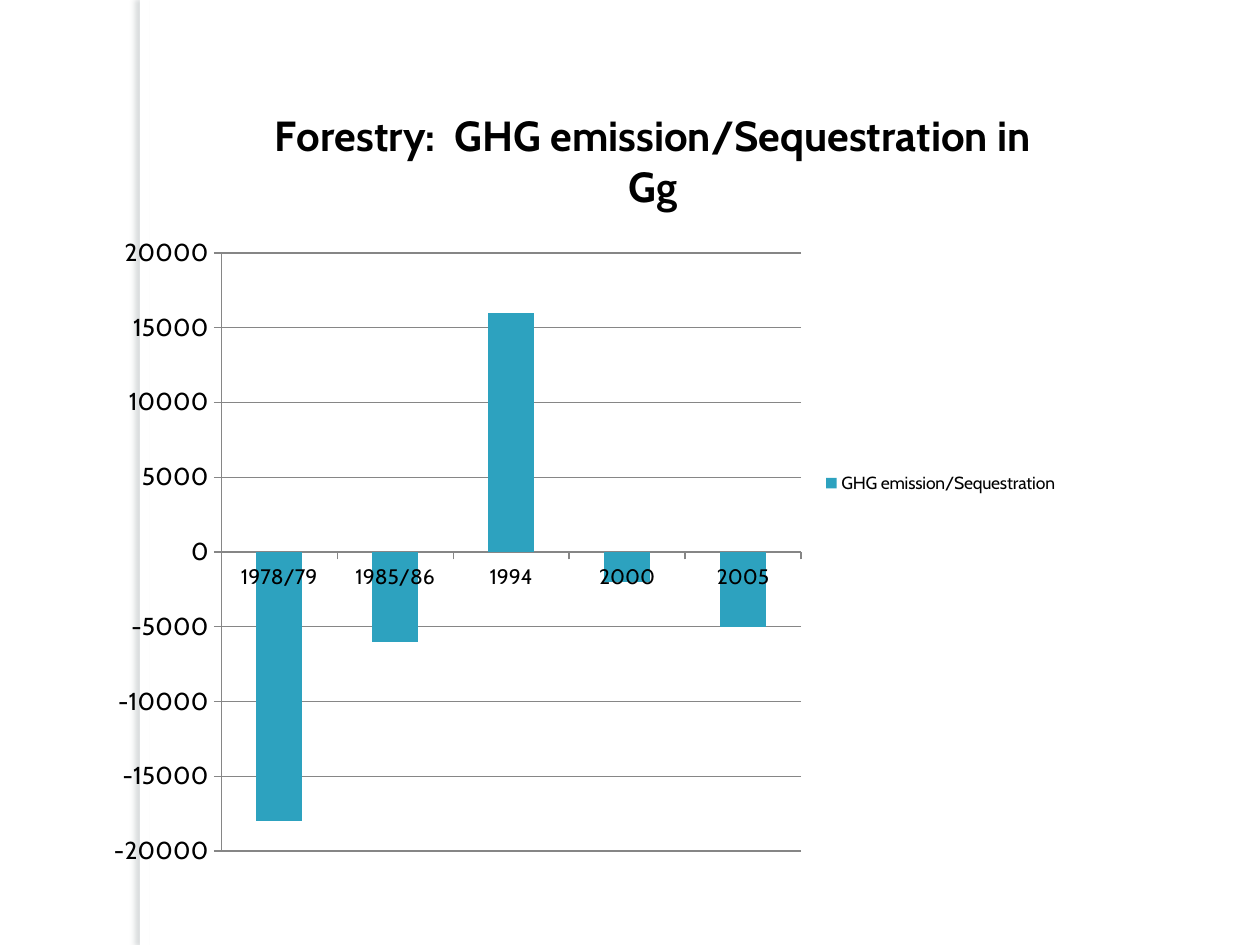
from lxml.etree import SubElement
from pptx import Presentation
from pptx.chart.data import CategoryChartData
from pptx.dml.color import RGBColor
from pptx.enum.chart import XL_CHART_TYPE, XL_LEGEND_POSITION, XL_TICK_MARK
from pptx.enum.shapes import MSO_SHAPE
from pptx.oxml import parse_xml
from pptx.oxml.ns import nsdecls, qn
from pptx.util import Cm, Pt


def color(code):
    return RGBColor.from_string(code)


class Deck:
    font = {"name": "Cabin", "size": Pt(10), "bold": False}
    ink, grey, blue = "000000", "868686", "2DA2BF"

    def __init__(self, wide, high):
        self.prs = Presentation()
        self.prs.slide_width, self.prs.slide_height = Cm(wide), Cm(high)
        self.slide = self.prs.slides.add_slide(self.prs.slide_layouts[6])

    def style(self, font, **extra):
        for key, value in {**self.font, **extra}.items():
            setattr(font, key, value)
        font.color.rgb = color(self.ink)

    def strip(self, *box):
        """White band with a soft shadow on its left."""
        band = self.slide.shapes.add_shape(MSO_SHAPE.RECTANGLE, *map(Cm, box))
        band.shadow.inherit = False
        band.fill.solid()
        band.fill.fore_color.rgb = color("FFFFFF")
        band.line.fill.background()
        glow = band.element.spPr.find(qn("a:effectLst"))
        glow.append(parse_xml(
            f'<a:outerShdw {nsdecls("a")} blurRad="{Pt(3)}" dist="{Pt(3)}" '
            'dir="10800000" algn="tl" rotWithShape="0"><a:srgbClr val="6E7A7D">'
            '<a:alpha val="25000"/></a:srgbClr></a:outerShdw>'))

    def place(self, part, box, inner=False, **spots):
        """Fix a chart part, given in cm from the corner of the chart."""
        old = part.find(qn("c:layout"))
        if old is not None:
            part.remove(old)
        layout = parse_xml(f'<c:layout {nsdecls("c")}><c:manualLayout/></c:layout>')
        marks = {"layoutTarget": "inner"} if inner else {}
        marks.update(xMode="edge", yMode="edge")
        for key, value in spots.items():
            marks[key] = value / (box[2] if key in "xw" else box[3])
        for tag, value in marks.items():
            SubElement(layout[0], qn(f"c:{tag}")).set("val", str(value))
        text = part.find(qn("c:tx"))
        part.insert(0 if text is None else 1, layout)

    def axis(self, axis, size):
        axis.major_tick_mark = XL_TICK_MARK.OUTSIDE
        axis.format.line.color.rgb = color(self.grey)
        self.style(axis.tick_labels.font, size=Pt(size))

    def columns(self, box, title, name, points):
        data = CategoryChartData()
        data.categories = list(points)
        data.add_series(name, points.values())
        chart = self.slide.shapes.add_chart(
            XL_CHART_TYPE.COLUMN_CLUSTERED, *map(Cm, box), data).chart
        self.style(chart.font)

        # Title and legend
        head = chart.chart_title.text_frame
        head.text = title
        self.style(head.paragraphs[0].runs[0].font, size=Pt(24), bold=True)
        self.place(chart.chart_title._element, box, x=3.49, y=0.28)
        chart.has_legend = True
        chart.legend.position = XL_LEGEND_POSITION.RIGHT
        chart.legend.include_in_layout = False
        self.style(chart.legend.font)

        # Axes and grid
        self.axis(chart.category_axis, 12)
        scale = chart.value_axis
        self.axis(scale, 14)
        for key, value in {"minimum_scale": -20000, "maximum_scale": 20000,
                           "major_unit": 5000, "has_major_gridlines": True}.items():
            setattr(scale, key, value)
        scale.major_gridlines.format.line.color.rgb = color(self.grey)
        scale.tick_labels.number_format = "General"
        scale.tick_labels.number_format_is_linked = False

        # Bars
        plot = chart.plots[0]
        plot.gap_width, plot.vary_by_categories = 150, False
        bars = plot.series[0]
        bars.invert_if_negative = False
        bars.format.fill.solid()
        bars.format.fill.fore_color.rgb = color(self.blue)
        area = chart._chartSpace.chart.plotArea
        self.place(area, box, inner=True, x=2.56, y=3.4, w=11.69, h=12.06)


def main():
    deck = Deck(25.4, 19.05)
    deck.strip(2.82, 0, 0.2, 19.05)
    deck.columns(
        (1.9, 1.7, 19.69, 16.08),
        "Forestry:  GHG emission/Sequestration in Gg",
        "GHG emission/Sequestration",
        {"1978/79": -18000, "1985/86": -6000, "1994": 16000,
         "2000": -2000, "2005": -5000})
    deck.prs.save("out.pptx")


if __name__ == "__main__":
    main()
